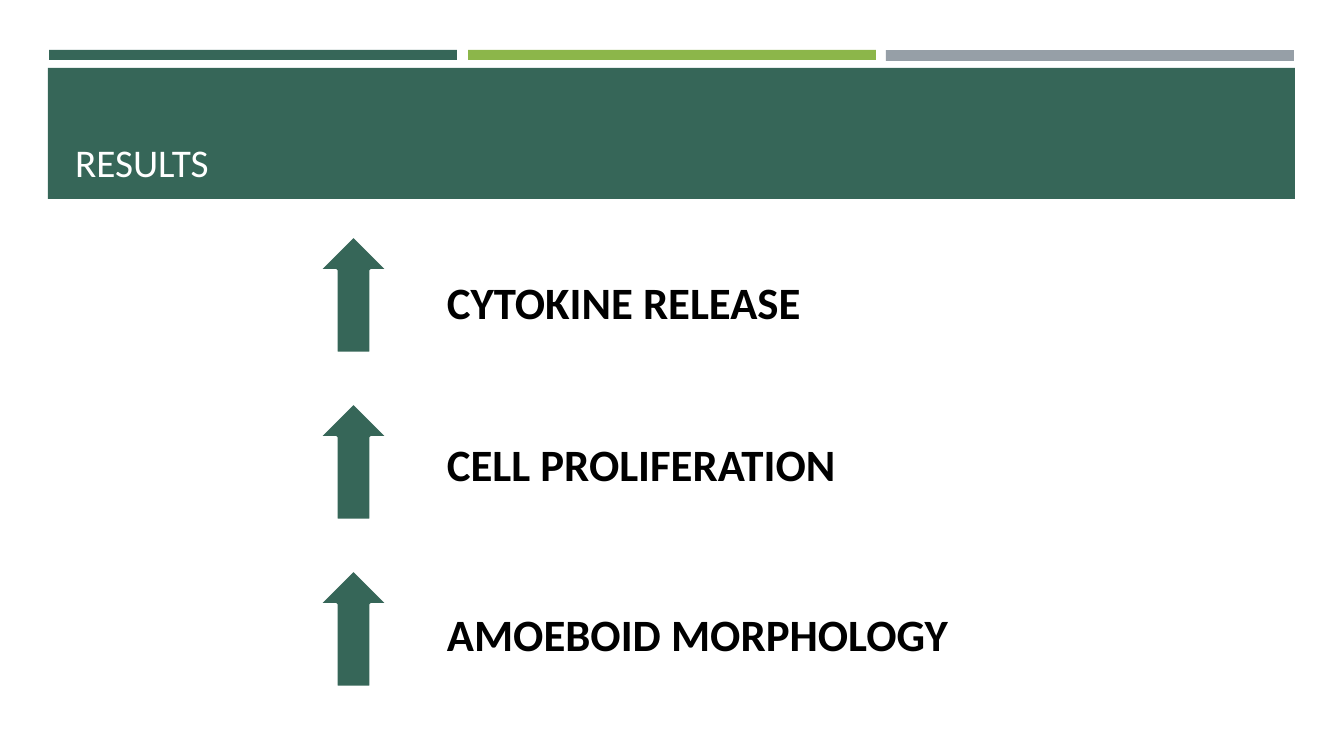
from dataclasses import dataclass

from pptx import Presentation
from pptx import util as u
from pptx.dml.color import RGBColor
from pptx.enum import shapes, text

EMU_PER_PX = 914400 / 100.8


@dataclass(frozen=True)
class Theme:
    font: str = "Calibri"
    green: str = "366658"
    lime: str = "8CB64A"
    gray: str = "969FA7"
    white: str = "FFFFFF"
    black: str = "000000"
    title_size: int = 28
    finding_size: int = 32
    outline: int = 2


def px(*lengths):
    return [u.Emu(round(length * EMU_PER_PX)) for length in lengths]


class SlideBuilder:
    def __init__(self, slide, theme):
        self.slide = slide
        self.theme = theme

    def shape(self, kind, box, fill, outline=None):
        shape = self.slide.shapes.add_shape(kind, *px(*box))
        shape.shadow.inherit = False
        shape.fill.solid()
        shape.fill.fore_color.rgb = RGBColor.from_string(fill)
        if outline:
            shape.line.color.rgb = RGBColor.from_string(outline)
            shape.line.width = u.Pt(self.theme.outline)
        else:
            shape.line.fill.background()

    def set_text(self, shape, words, size, color, bold=False):
        frame = shape.text_frame
        frame.word_wrap = True
        frame.text = words
        paragraph = frame.paragraphs[0]
        paragraph.alignment = text.PP_ALIGN.LEFT
        font = paragraph.font
        font.name = self.theme.font
        font.size = u.Pt(size)
        font.bold = bold
        font.color.rgb = RGBColor.from_string(color)
        return frame

    def title(self, words, box):
        title = self.slide.shapes.title
        title.left, title.top, title.width, title.height = px(*box)
        frame = self.set_text(title, words, self.theme.title_size, self.theme.white)
        frame.auto_size = text.MSO_AUTO_SIZE.NONE
        frame.vertical_anchor = text.MSO_ANCHOR.BOTTOM
        # Bring the title in front of the banner
        self.slide.shapes._spTree.append(title._element)

    def finding(self, words, box):
        label = self.slide.shapes.add_textbox(*px(*box))
        frame = self.set_text(label, words, self.theme.finding_size,
                              self.theme.black, bold=True)
        frame.auto_size = text.MSO_AUTO_SIZE.SHAPE_TO_FIT_TEXT


def main():
    presentation = Presentation()
    presentation.slide_width, presentation.slide_height = px(1344, 756)
    theme = Theme()
    slide = presentation.slides.add_slide(presentation.slide_layouts[5])
    builder = SlideBuilder(slide, theme)
    preset = shapes.MSO_SHAPE

    # Accent bars and title banner
    bars = [(49, 10, theme.green), (468, 10, theme.lime), (886, 11, theme.gray)]
    for left, height, color in bars:
        builder.shape(preset.RECTANGLE, (left, 50, 408, height), color)
    builder.shape(preset.RECTANGLE, (48, 68, 1247, 131), theme.green)
    builder.title("RESULTS", (65, 78, 1216, 112))

    # Findings, each with an arrow for the increase
    findings = [
        ("CYTOKINE RELEASE", 270, 611),
        ("CELL PROLIFERATION", 432, 611),
        ("AMOEBOID MORPHOLOGY", 602, 687),
    ]
    for row, (words, top, width) in enumerate(findings):
        builder.shape(preset.UP_ARROW, (319, 236 + 167 * row, 69, 117),
                      theme.green, outline=theme.white)
        builder.finding(words, (437, top, width, 65))

    presentation.save("out.pptx")


if __name__ == "__main__":
    main()
